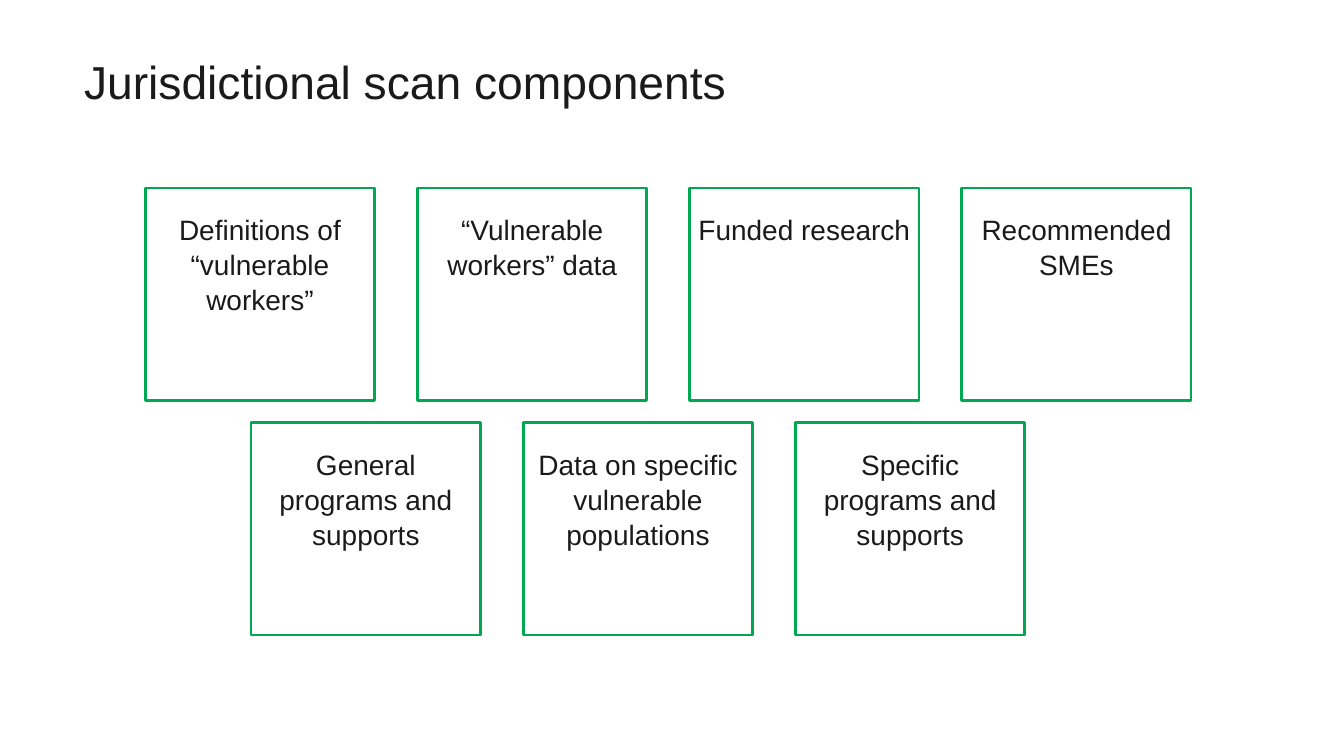
from pptx import Presentation
from pptx import util as u
from pptx.dml.color import RGBColor
from pptx.enum import shapes, text

GREEN = RGBColor(0x00, 0xA8, 0x51)
INK = RGBColor(0x1A, 0x1A, 0x1A)
FONT = "Arial"

CARD_WIDTH, CARD_HEIGHT = 2.73, 2.53
COLUMN_STEP = 3.24
TOP_ROW = ["Definitions of “vulnerable workers”", "“Vulnerable workers” data",
           "Funded research", "Recommended SMEs"]
BOTTOM_ROW = ["General programs and supports", "Data on specific vulnerable populations",
              "Specific programs and supports"]


def fill_text(frame, words, size, alignment, line_spacing, insets):
    frame.word_wrap = True
    frame.auto_size = text.MSO_AUTO_SIZE.NONE
    frame.vertical_anchor = text.MSO_ANCHOR.TOP
    (frame.margin_left, frame.margin_top,
     frame.margin_right, frame.margin_bottom) = map(u.Inches, insets)
    paragraph = frame.paragraphs[0]
    paragraph.alignment = alignment
    paragraph.line_spacing = line_spacing
    run = paragraph.add_run()
    run.text = words
    run.font.name = FONT
    run.font.size = u.Pt(size)
    run.font.color.rgb = INK


def add_title(slide, words, left, top, width, height):
    title = slide.shapes.title
    title.left, title.top, title.width, title.height = map(
        u.Inches, (left, top, width, height))
    fill_text(title.text_frame, words, 39.6, text.PP_ALIGN.LEFT, 0.9, (0, 0, 0, 0))


def add_card_row(slide, labels, left, top):
    for column, label in enumerate(labels):
        card = slide.shapes.add_shape(
            shapes.MSO_SHAPE.RECTANGLE, u.Inches(left + column * COLUMN_STEP),
            u.Inches(top), u.Inches(CARD_WIDTH), u.Inches(CARD_HEIGHT))
        card.shadow.inherit = False
        card.fill.background()
        card.line.color.rgb = GREEN
        card.line.width = u.Pt(2.25)
        fill_text(card.text_frame, label, 24, text.PP_ALIGN.CENTER, 1.04,
                  (0.1, 0.28, 0.1, 0.05))


def main():
    presentation = Presentation()
    presentation.slide_width, presentation.slide_height = u.Inches(16), u.Inches(9)
    slide = presentation.slides.add_slide(presentation.slide_layouts[5])
    add_title(slide, "Jurisdictional scan components", 1, 0.71, 14, 0.67)
    add_card_row(slide, TOP_ROW, 1.73, 2.24)
    add_card_row(slide, BOTTOM_ROW, 2.99, 5.03)
    presentation.save("out.pptx")


if __name__ == "__main__":
    main()
